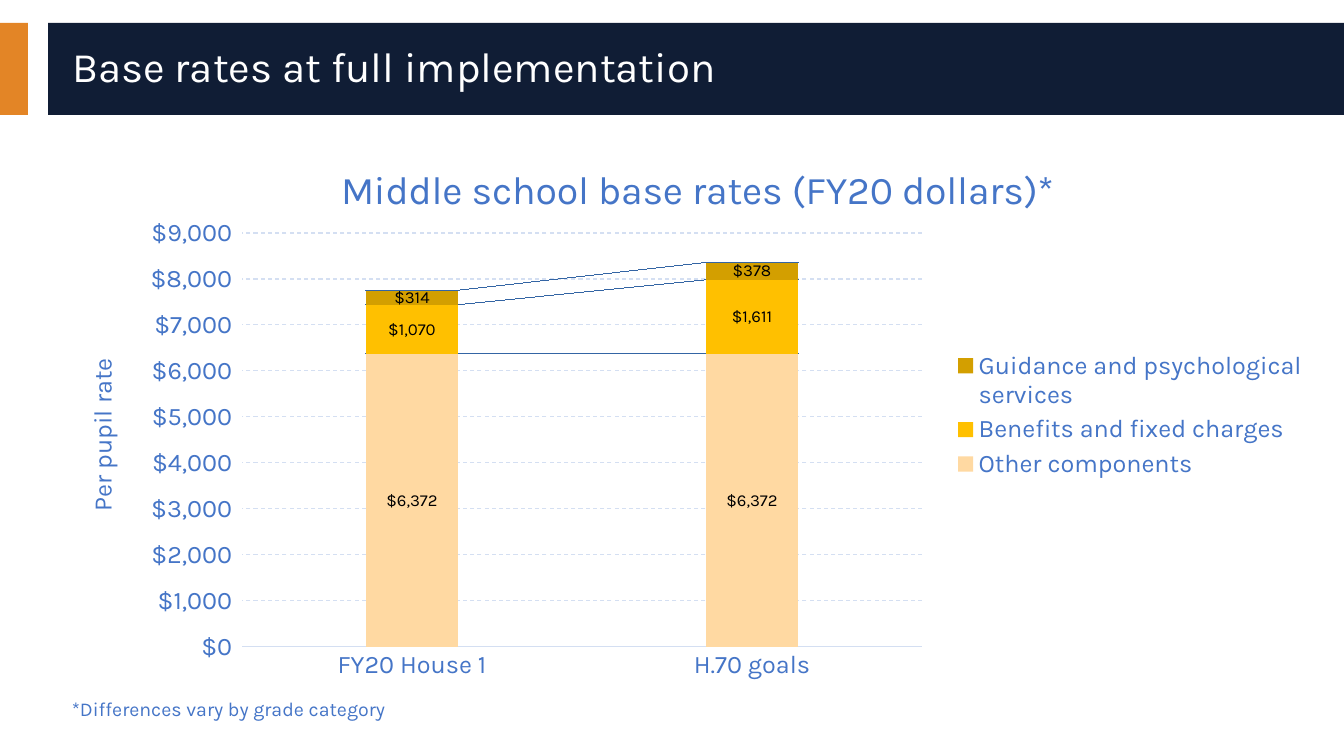
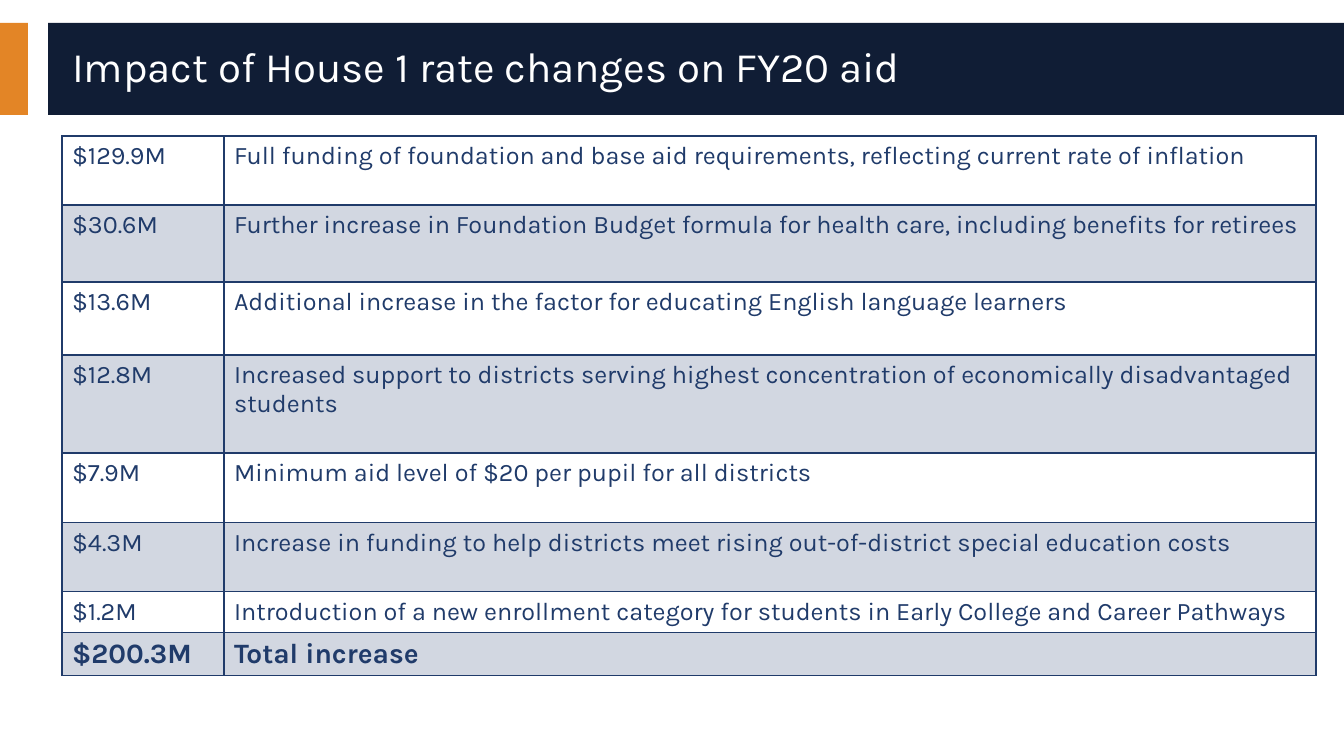
from pptx import Presentation
from pptx.chart.data import CategoryChartData
from pptx.dml.color import RGBColor
from pptx.enum.chart import XL_CHART_TYPE as Kind, XL_LEGEND_POSITION as LegendPos, XL_TICK_MARK as Tick
from pptx.enum.dml import MSO_LINE as Dash
from pptx.enum.shapes import MSO_SHAPE as Preset
from pptx.enum.text import MSO_ANCHOR as Anchor, MSO_AUTO_SIZE as AutoSize, PP_ALIGN as Align
from pptx.oxml import parse_xml
from pptx.oxml.ns import nsdecls, qn
from pptx.util import Emu, Pt

FONT = "Karla"
DOLLARS = '"$"#,##0'
COLORS = {
    "accent": "E38526", "band": "101D35", "white": "FFFFFF", "black": "000000",
    "text": "203B6A", "label": "4575C7", "grid": "D4DFF2", "link": "3465A4",
    "peach": "FFD9A2", "gold": "FFC000", "ochre": "D39F00",
}


def px(n):
    return Emu(round(n * 12192000 / 1344))


def rgb(name):
    return RGBColor.from_string(COLORS[name])


def set_font(font, size, color, bold=False):
    font.name, font.size, font.bold = FONT, Pt(size), bold
    font.color.rgb = rgb(color)


def write(tf, text, size=18, color="text", bold=False, align=Align.LEFT, spacing=None):
    p = tf.paragraphs[0]
    p.alignment = align
    if spacing:
        p.line_spacing = spacing
    r = p.add_run()
    r.text = text
    set_font(r.font, size, color, bold)


def solid(name, alpha=100):
    return (f'<a:solidFill {nsdecls("a")}><a:srgbClr val="{COLORS[name]}">'
            f'<a:alpha val="{alpha * 1000}"/></a:srgbClr></a:solidFill>')


def style_line(line, color, dash=None):
    line.color.rgb = rgb(color)
    line.width = Pt(0.75)
    if dash:
        line.dash_style = dash


def place(el, frame, x, y, w=None, h=None):
    """Fix a chart part at slide px inside the chart frame."""
    left, top, width, height = frame
    parts = {"x": (x - left) / width, "y": (y - top) / height}
    if w:
        parts.update(w=w / width, h=h / height)
    inner = el.tag == qn("c:plotArea")
    target = '<c:layoutTarget val="inner"/>' if inner else ""
    modes = "".join(f'<c:{k}Mode val="edge"/>' for k in "xy")
    sizes = "".join(f'<c:{k} val="{v:.4f}"/>' for k, v in parts.items())
    layout = parse_xml(f'<c:layout {nsdecls("c")}><c:manualLayout>{target}{modes}{sizes}'
                       '</c:manualLayout></c:layout>')
    for old in el.findall(qn("c:layout")):
        el.remove(old)
    if inner:
        el.insert(0, layout)
    else:
        el.find(qn("c:overlay")).addprevious(layout)


class Deck:
    def __init__(self):
        self.prs = Presentation()
        self.prs.slide_width, self.prs.slide_height = px(1344), px(756)
        self.layout = self.prs.slide_layouts[5]
        for ph in list(self.layout.placeholders)[1:]:
            ph.element.getparent().remove(ph.element)
        self.s = None

    def slide(self, title):
        first = self.s is None
        self.s = self.prs.slides.add_slide(self.layout)
        if first:
            bands = [self.rect(0, 23, 28, 92, "accent"), self.rect(48, 23, 1296, 92, "band")]
            for sp in bands:
                self.layout.shapes.element.insert(2, sp.element)
        sp = self.s.shapes.title
        sp.left, sp.top, sp.width, sp.height = map(px, (62, 32, 1254, 74))
        tf = sp.text_frame
        tf.auto_size, tf.vertical_anchor = AutoSize.NONE, Anchor.MIDDLE
        write(tf, title, size=30, color="white", spacing=0.9)

    def rect(self, x, y, w, h, color):
        sp = self.s.shapes.add_shape(Preset.RECTANGLE, *map(px, (x, y, w, h)))
        sp.shadow.inherit = False
        sp.fill.solid()
        sp.fill.fore_color.rgb = rgb(color)
        sp.line.fill.background()
        return sp

    def text(self, x, y, w, h, text, **fmt):
        tf = self.s.shapes.add_textbox(*map(px, (x, y, w, h))).text_frame
        tf.word_wrap = True
        write(tf, text, **fmt)

    def stacked_chart(self, frame, title, axis_title, cats, series):
        data = CategoryChartData(number_format=DOLLARS)
        data.categories = cats
        for name, values, _ in series:
            data.add_series(name, values)
        chart = self.s.shapes.add_chart(Kind.COLUMN_STACKED, *map(px, frame), data).chart
        set_font(chart.font, 10, "text")

        chart.has_title = True
        write(chart.chart_title.text_frame, title, size=28, color="label", align=Align.CENTER)
        chart.chart_title.include_in_layout = False
        place(chart.chart_title.element, frame, 334, 157)

        plot = chart.plots[0]
        plot.gap_width, plot.overlap, plot.vary_by_categories = 268, 100, False
        for ser, (_, _, color) in zip(plot.series, series):
            ser.format.fill.solid()
            ser.format.fill.fore_color.rgb = rgb(color)
            labels = ser.data_labels
            labels.show_value = True
            labels.number_format, labels.number_format_is_linked = DOLLARS, False
            set_font(labels.font, 12, "black")
        chart.element.xpath(".//c:overlap")[0].addnext(parse_xml(
            f'<c:serLines {nsdecls("c")}><c:spPr><a:ln {nsdecls("a")} w="9525">'
            f'{solid("link")}</a:ln></c:spPr></c:serLines>'))
        place(chart.element.xpath(".//c:plotArea")[0], frame, 242, 233, 680, 414)

        cat, val = chart.category_axis, chart.value_axis
        for axis in (cat, val):
            set_font(axis.tick_labels.font, 18, "label")
        cat.major_tick_mark = Tick.NONE
        style_line(cat.format.line, "grid")
        val.minimum_scale, val.maximum_scale, val.major_unit = 0, 9000, 1000
        val.tick_labels.number_format = DOLLARS
        val.tick_labels.number_format_is_linked = False
        val.format.line.fill.background()
        style_line(val.major_gridlines.format.line, "grid", Dash.DASH)
        write(val.axis_title.text_frame, axis_title, color="label", align=Align.CENTER)
        val.axis_title.element.xpath(".//a:bodyPr")[0].set("rot", "-5400000")
        place(val.axis_title.element, frame, 81, 354)

        chart.has_legend = True
        chart.legend.position = LegendPos.RIGHT
        chart.legend.include_in_layout = False
        set_font(chart.legend.font, 18, "label")
        place(chart.element.xpath(".//c:legend")[0], frame, 947, 346, 366, 138)

    def table(self, x, y, widths, heights, rows):
        shape = self.s.shapes.add_table(len(rows), len(widths),
                                        *map(px, (x, y, sum(widths), sum(heights))))
        tbl = shape.table
        tbl.first_row = tbl.horz_banding = False
        for col, w in zip(tbl.columns, widths):
            col.width = px(w)
        for i, (row, h, texts) in enumerate(zip(tbl.rows, heights, rows)):
            row.height = px(h)
            total = i == len(rows) - 1
            for cell, text in zip(row.cells, texts):
                write(cell.text_frame, text, size=20 if total else 18, bold=total)
                self.cell_format(cell, shaded=i % 2 == 1)

    def cell_format(self, cell, shaded):
        tc_pr = cell._tc.get_or_add_tcPr()
        for side in "LRTB":
            tc_pr.append(parse_xml(f'<a:ln{side} {nsdecls("a")} w="12700">{solid("text")}</a:ln{side}>'))
        if shaded:
            tc_pr.append(parse_xml(solid("text", 20)))
        else:
            cell.fill.background()


def main():
    deck = Deck()

    deck.slide("Base rates at full implementation")
    deck.stacked_chart(
        (62, 136, 1253, 556), "Middle school base rates (FY20 dollars)*", "Per pupil rate",
        ["FY20 House 1", "H.70 goals"],
        [("Other components", (6372, 6372), "peach"),
         ("Benefits and fixed charges", (1070, 1611), "gold"),
         ("Guidance and psychological services", (314, 378), "ochre")])
    deck.text(62, 692, 791, 34, "*Differences vary by grade category", size=14, color="label")

    deck.slide("Impact of House 1 rate changes on FY20 aid")
    deck.table(62, 136, (162, 1092), (69, 77, 73, 98, 70, 69, 41, 43), [
        ("$129.9M", "Full funding of foundation and base aid requirements, "
                    "reflecting current rate of inflation"),
        ("$30.6M", "Further increase in Foundation Budget formula for health care, "
                   "including benefits for retirees"),
        ("$13.6M", "Additional increase in the factor for educating English language learners"),
        ("$12.8M", "Increased support to districts serving highest concentration of "
                   "economically disadvantaged students"),
        ("$7.9M", "Minimum aid level of $20 per pupil for all districts"),
        ("$4.3M", "Increase in funding to help districts meet rising out-of-district "
                  "special education costs"),
        ("$1.2M", "Introduction of a new enrollment category for students in "
                  "Early College and Career Pathways"),
        ("$200.3M", "Total increase"),
    ])

    deck.prs.save("out.pptx")


if __name__ == "__main__":
    main()
